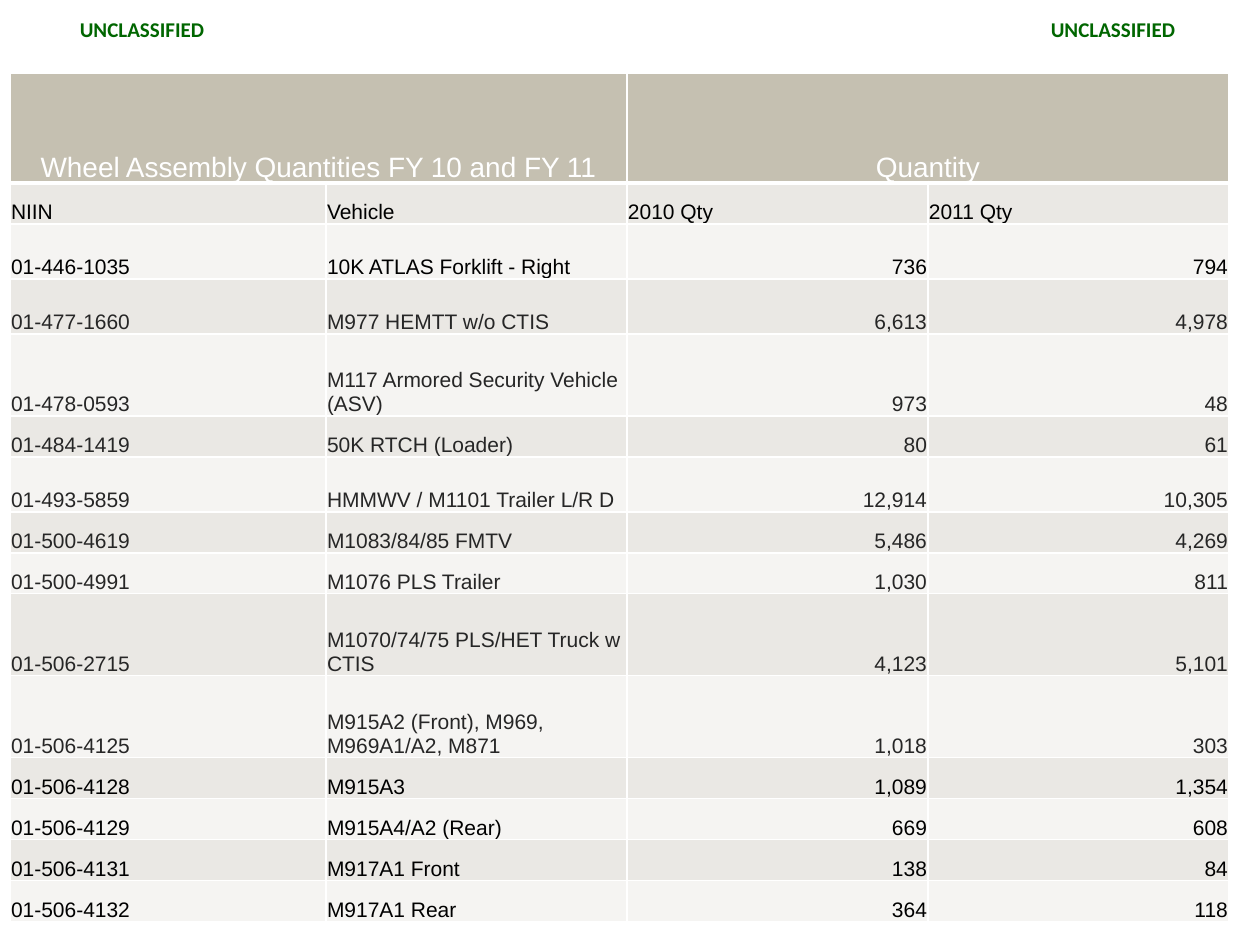
from lxml import etree
from pptx import Presentation
from pptx import util as u
from pptx.dml.color import RGBColor
from pptx.enum import text
from pptx.oxml import ns

PX = 914400 // 126
WHITE = RGBColor(0xFF, 0xFF, 0xFF)
BLACK = RGBColor(0, 0, 0)
GRAY = RGBColor(0x26, 0x26, 0x26)
GREEN = RGBColor(0, 0x66, 0)
TAN = RGBColor(0xC5, 0xC0, 0xB1)
DARK = RGBColor(0xEA, 0xE8, 0xE4)
LIGHT = RGBColor(0xF5, 0xF4, 0xF2)
LEFT, MID, RIGHT = text.PP_ALIGN.LEFT, text.PP_ALIGN.CENTER, text.PP_ALIGN.RIGHT

# Row height in px, text colour, cell texts
ROWS = [
    (110, WHITE, ["Wheel Assembly Quantities FY 10 and FY 11", "", "Quantity", ""]),
    (41, BLACK, ["NIIN", "Vehicle", "2010 Qty", "2011 Qty"]),
    (55, BLACK, ["01-446-1035", "10K ATLAS Forklift - Right", "736", "794"]),
    (55, GRAY, ["01-477-1660", "M977 HEMTT w/o CTIS", "6,613", "4,978"]),
    (82, GRAY, ["01-478-0593", "M117 Armored Security Vehicle (ASV)", "973", "48"]),
    (41, GRAY, ["01-484-1419", "50K RTCH (Loader)", "80", "61"]),
    (55, GRAY, ["01-493-5859", "HMMWV / M1101 Trailer L/R D", "12,914", "10,305"]),
    (41, GRAY, ["01-500-4619", "M1083/84/85 FMTV", "5,486", "4,269"]),
    (41, GRAY, ["01-500-4991", "M1076 PLS Trailer", "1,030", "811"]),
    (82, GRAY, ["01-506-2715", "M1070/74/75 PLS/HET Truck w CTIS", "4,123", "5,101"]),
    (82, GRAY, ["01-506-4125", "M915A2 (Front), M969, M969A1/A2, M871", "1,018", "303"]),
    (41, BLACK, ["01-506-4128", "M915A3", "1,089", "1,354"]),
    (41, BLACK, ["01-506-4129", "M915A4/A2 (Rear)", "669", "608"]),
    (41, BLACK, ["01-506-4131", "M917A1 Front", "138", "84"]),
    (41, BLACK, ["01-506-4132", "M917A1 Rear", "364", "118"]),
]
COLS = [316, 301, 301, 301]


def write(para, words, face, size, color, align, bold=False):
    para.alignment = align
    run = para.add_run()
    run.text = words
    font = run.font
    font.name, font.size, font.bold = face, u.Pt(size), bold
    font.color.rgb = color


def edge(cell, side, width):
    """Draw one white border; side is L, R, T or B."""
    line = etree.SubElement(cell._tc.get_or_add_tcPr(), ns.qn("a:ln" + side), w=str(u.Pt(width)))
    fill = etree.SubElement(line, ns.qn("a:solidFill"))
    etree.SubElement(fill, ns.qn("a:srgbClr"), val=str(WHITE))


deck = Presentation()
deck.slide_width, deck.slide_height = u.Inches(10), u.Inches(7.5)
slide = deck.slides.add_slide(deck.slide_layouts[6])

for left, width in [(1008, 210), (32, 220)]:
    mark = slide.shapes.add_textbox(left * PX, 10 * PX, width * PX, 38 * PX).text_frame
    mark.word_wrap = True
    mark.vertical_anchor = text.MSO_ANCHOR.MIDDLE
    write(mark.paragraphs[0], "UNCLASSIFIED", "Calibri", 12, GREEN, MID, True)

high = sum(row[0] for row in ROWS)
frame = slide.shapes.add_table(len(ROWS), len(COLS), 10 * PX, 73 * PX, sum(COLS) * PX, high * PX)
table = frame.table
for col, width in zip(table.columns, COLS):
    col.width = width * PX

for r, (height, color, words) in enumerate(ROWS):
    table.rows[r].height = height * PX
    for c, word in enumerate(words):
        cell = table.cell(r, c)
        cell.margin_left = cell.margin_right = cell.margin_top = PX
        cell.margin_bottom = 0
        cell.vertical_anchor = text.MSO_ANCHOR.BOTTOM
        for side in "LRTB":
            thick = (r, side) in [(0, "B"), (1, "T")]
            edge(cell, side, 3 if thick else 1)
        cell.fill.solid()
        cell.fill.fore_color.rgb = TAN if r == 0 else DARK if r % 2 else LIGHT
        if word:
            align = MID if r == 0 else RIGHT if r > 1 and c > 1 else LEFT
            write(cell.text_frame.paragraphs[0], word, "Arial", 12 if r else 16, color, align)

for c in (0, 2):
    table.cell(0, c).merge(table.cell(0, c + 1))

deck.save("out.pptx")
